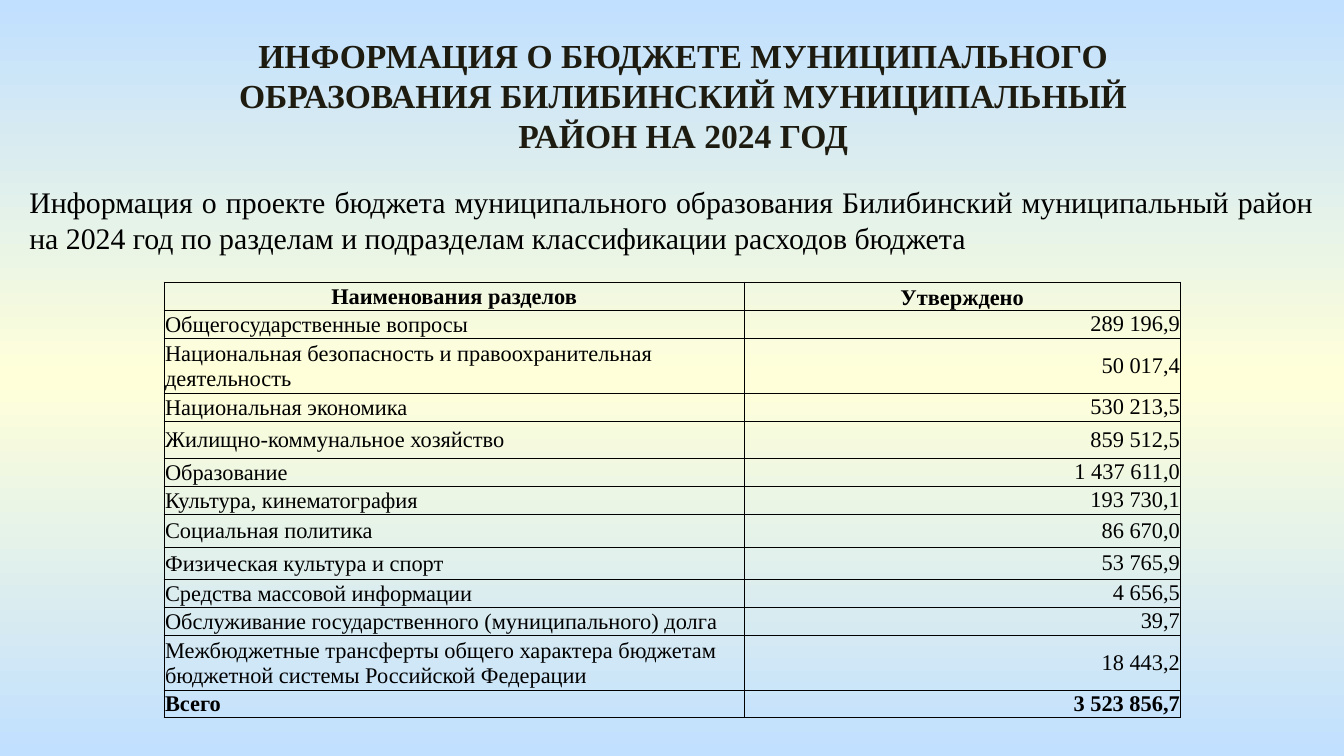
from copy import deepcopy

from lxml import etree
from pptx import Presentation
from pptx.dml.color import RGBColor
from pptx.enum import text
from pptx.oxml import ns
from pptx.util import Cm, Pt

FONT = "Times New Roman"
SKY = RGBColor(0xC1, 0xE0, 0xFF)
CREAM = RGBColor(0xFF, 0xFF, 0xD9)
DARK = RGBColor(0x1E, 0x1C, 0x11)
BLACK = RGBColor(0, 0, 0)

LINE, TWO_LINES = 0.53, 1.04  # row heights in cm
HEADINGS = ("Наименования разделов", "Утверждено", LINE)
SECTIONS = [
    ("Общегосударственные вопросы", "289 196,9", LINE),
    ("Национальная безопасность и правоохранительная деятельность", "50 017,4", TWO_LINES),
    ("Национальная экономика", "530 213,5", LINE),
    ("Жилищно-коммунальное хозяйство", "859 512,5", 0.7),
    ("Образование", "1 437 611,0", LINE),
    ("Культура, кинематография", "193 730,1", LINE),
    ("Социальная политика", "86 670,0", 0.62),
    ("Физическая культура и спорт", "53 765,9", 0.61),
    ("Средства массовой информации", "4 656,5", LINE),
    ("Обслуживание государственного (муниципального) долга", "39,7", LINE),
    ("Межбюджетные трансферты общего характера бюджетам бюджетной системы "
     "Российской Федерации", "18 443,2", TWO_LINES),
]
TOTAL = ("Всего", "3 523 856,7", 0.51)


def paint_background(slide):
    fill = slide.background.fill
    fill.gradient()
    fill.gradient_angle = 270
    stops = slide.element.find(".//" + ns.qn("a:gsLst"))
    stops.insert(1, deepcopy(stops[0]))
    for stop, color, position in zip(fill.gradient_stops, (SKY, CREAM, SKY), (0, 0.5, 1)):
        stop.color.rgb = color
        stop.position = position


def format_paragraph(paragraph, size, color, alignment, bold=False):
    paragraph.alignment = alignment
    font = paragraph.font
    font.name, font.size, font.bold = FONT, Pt(size), bold
    font.color.rgb = color


def fill_placeholder(placeholder, box, wording, anchor, **style):
    placeholder.left, placeholder.top, placeholder.width, placeholder.height = box
    frame = placeholder.text_frame
    frame.text = wording
    frame.word_wrap = True
    frame.auto_size = text.MSO_AUTO_SIZE.NONE
    frame.vertical_anchor = anchor
    paragraph = frame.paragraphs[0]
    paragraph.space_before = Pt(0)
    format_paragraph(paragraph, **style)
    return paragraph


def add_heading(slide, box):
    fill_placeholder(
        slide.shapes.title, box,
        "ИНФОРМАЦИЯ О БЮДЖЕТЕ МУНИЦИПАЛЬНОГО ОБРАЗОВАНИЯ БИЛИБИНСКИЙ "
        "МУНИЦИПАЛЬНЫЙ РАЙОН НА 2024 ГОД",
        text.MSO_ANCHOR.TOP, size=18, color=DARK,
        alignment=text.PP_ALIGN.CENTER, bold=True)


def add_introduction(slide, box):
    introduction = fill_placeholder(
        slide.placeholders[1], box,
        "Информация о проекте бюджета муниципального образования Билибинский "
        "муниципальный район на 2024 год по разделам и подразделам "
        "классификации расходов бюджета",
        text.MSO_ANCHOR.TOP, size=16, color=BLACK,
        alignment=text.PP_ALIGN.JUSTIFY)
    properties = introduction._p.get_or_add_pPr()
    properties.set("marL", "0")
    properties.set("indent", "0")
    # The bullet setting must stand before the default run properties.
    bullet = etree.Element(ns.qn("a:buNone"))
    run_defaults = properties.find(ns.qn("a:defRPr"))
    if run_defaults is None:
        properties.append(bullet)
    else:
        run_defaults.addprevious(bullet)


def draw_borders(cell):
    properties = cell._tc.get_or_add_tcPr()
    for position, side in enumerate(("lnL", "lnR", "lnT", "lnB")):
        border = etree.Element(ns.qn("a:" + side), w=str(Pt(0.5)))
        solid = etree.SubElement(border, ns.qn("a:solidFill"))
        etree.SubElement(solid, ns.qn("a:srgbClr"), val=str(BLACK))
        properties.insert(position, border)


def fill_cell(cell, wording, alignment, anchor, bold, inset):
    cell.text = wording
    cell.fill.background()
    cell.vertical_anchor = anchor
    cell.margin_left = cell.margin_right = cell.margin_top = inset
    cell.margin_bottom = 0
    format_paragraph(cell.text_frame.paragraphs[0], 12, BLACK, alignment, bold)
    draw_borders(cell)


def add_budget_table(slide, box):
    rows = [HEADINGS, *SECTIONS, TOTAL]
    budget = slide.shapes.add_table(len(rows), 2, *box).table
    budget.first_row = budget.horz_banding = False
    names_width = Cm(10.97)
    budget.columns[0].width = names_width
    budget.columns[1].width = box[2] - names_width

    align, anchors = text.PP_ALIGN, text.MSO_ANCHOR
    for index, row in enumerate(rows):
        name, amount, height = row
        budget.rows[index].height = Cm(height)
        is_heading = row is HEADINGS
        bold = row in (HEADINGS, TOTAL)
        fill_cell(budget.cell(index, 0), name,
                  align.CENTER if is_heading else align.LEFT,
                  anchors.MIDDLE, bold, Cm(0.02))
        fill_cell(budget.cell(index, 1), amount,
                  align.CENTER if is_heading else align.RIGHT,
                  anchors.BOTTOM if is_heading else anchors.MIDDLE,
                  bold, Cm(0.02) if is_heading else 0)


def main():
    presentation = Presentation()
    presentation.slide_width, presentation.slide_height = Cm(25.4), Cm(14.29)
    slide = presentation.slides.add_slide(presentation.slide_layouts[1])
    paint_background(slide)
    add_heading(slide, (Cm(3.1), Cm(0.53), Cm(19.63), Cm(2.57)))
    add_introduction(slide, (Cm(0.3), Cm(3.35), Cm(24.79), Cm(1.63)))
    add_budget_table(slide, (Cm(3.1), Cm(5.33), Cm(19.2), Cm(8.23)))
    presentation.save("out.pptx")


if __name__ == "__main__":
    main()
